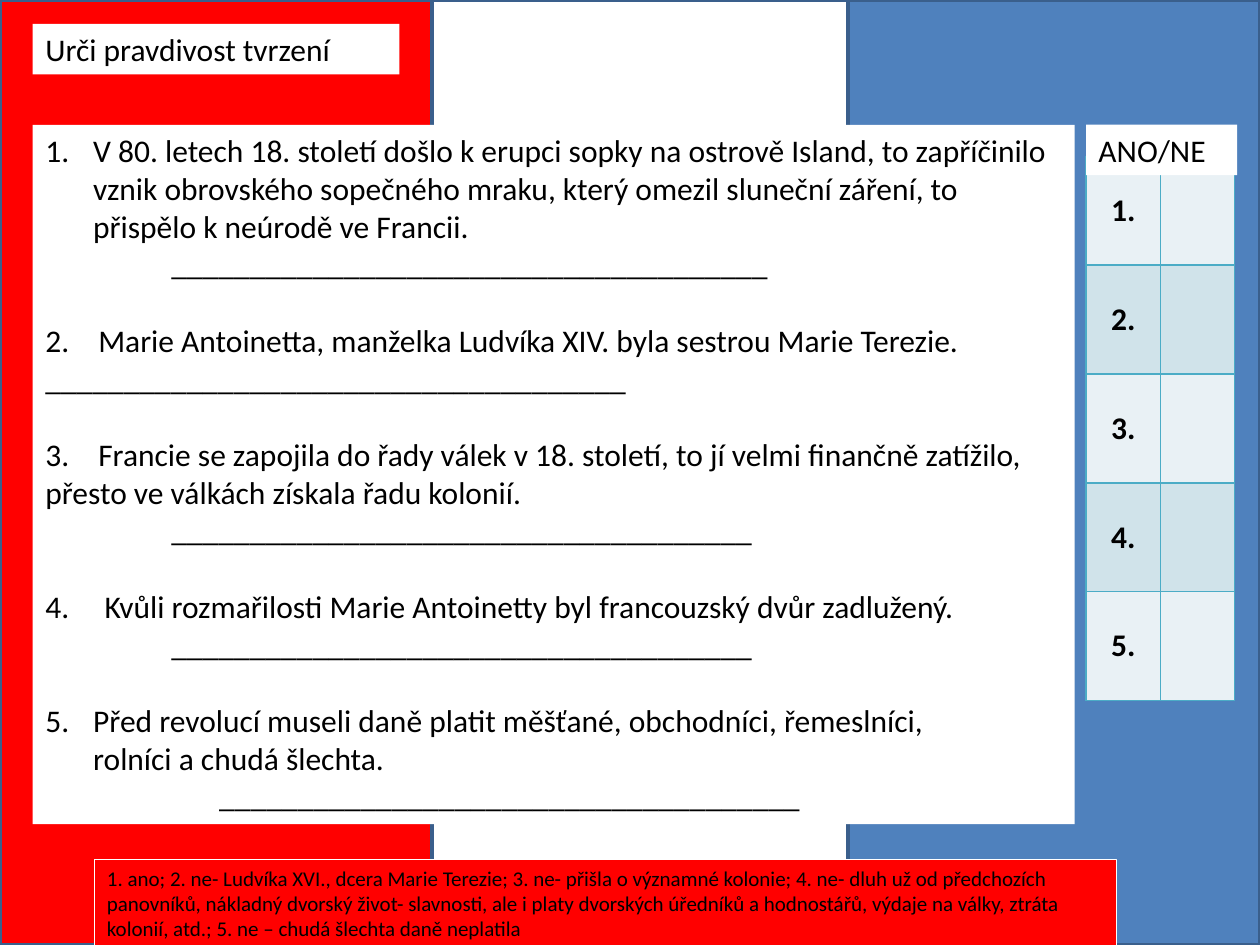
"""Build a true-or-false worksheet slide on the French Revolution."""
from pptx import Presentation, util as u
from pptx.dml.color import RGBColor
from pptx.enum import shapes, text
from pptx.oxml import parse_xml
from pptx.oxml.ns import nsdecls

BLACK, WHITE, RED, BLUE = "000000", "FFFFFF", "FF0000", "4F81BD"
BAND_LINE, GRID = "3A5F8C", "4BACC6"
ROW_FILLS = ["E9F1F5", "D0E3EA"]
BANDS = [(0, 3.43, RED), (3.43, 3.46, WHITE), (6.73, 3.27, BLUE)]

TITLE = "Urči pravdivost tvrzení"
HEADING = "ANO/NE"
ANSWERS = (
    "1. ano; 2. ne- Ludvíka XVI., dcera Marie Terezie; 3. ne- přišla o významné kolonie; "
    "4. ne- dluh už od předchozích panovníků, nákladný dvorský život- slavnosti, ale i platy "
    "dvorských úředníků a hodnostářů, výdaje na války, ztráta kolonií, atd.; "
    "5. ne – chudá šlechta daně neplatila"
)
# Each statement: text, hanging indent, continuation, its indent, blank length, blank indent
STATEMENTS = [
    ("V 80. letech 18. století došlo k erupci sopky na ostrově Island, to zapříčinilo "
     "vznik obrovského sopečného mraku, který omezil sluneční záření, to\v"
     "přispělo k neúrodě ve Francii.", 0.38, "", 0, 38, 1),
    ("Marie Antoinetta, manželka Ludvíka XIV. byla sestrou Marie Terezie.",
     0.42, "", 0, 37, 0),
    ("Francie se zapojila do řady válek v 18. století, to jí velmi finančně zatížilo,",
     0.42, "přesto ve válkách získala řadu kolonií.", 0, 37, 1),
    ("Kvůli rozmařilosti Marie Antoinetty byl francouzský dvůr zadlužený.",
     0.47, "", 0, 37, 1),
    ("Před revolucí museli daně platit měšťané, obchodníci, řemeslníci,",
     0.38, "rolníci a chudá šlechta.", 0.38, 37, 1.38),
]


def rgb(value):
    return RGBColor.from_string(value)


def paint(sp, fill, line=None, width=0):
    sp.fill.solid()
    sp.fill.fore_color.rgb = rgb(fill)
    if line:
        sp.line.color.rgb = rgb(line)
        sp.line.width = u.Pt(width)
    else:
        sp.line.fill.background()


def place(sp, left, top, width, height):
    sp.left, sp.top, sp.width, sp.height = map(u.Inches, (left, top, width, height))


def style(p, size=18, bold=False, align=text.PP_ALIGN.LEFT):
    p.alignment = align
    p.space_before = u.Pt(0)
    for r in p.runs:
        r.font.name, r.font.size, r.font.bold = "Calibri", u.Pt(size), bold
        r.font.color.rgb = rgb(BLACK)


def setup(sp):
    tf = sp.text_frame
    tf.word_wrap = True
    tf.auto_size = text.MSO_AUTO_SIZE.NONE
    tf.vertical_anchor = text.MSO_ANCHOR.TOP
    return tf


def write(sp, words, size=18):
    tf = setup(sp)
    tf.text = words
    style(tf.paragraphs[0], size)


def add_box(s, at, fill, line=None, width=0):
    sp = s.shapes.add_shape(shapes.MSO_SHAPE.RECTANGLE, *map(u.Inches, at))
    sp.shadow.inherit = False
    paint(sp, fill, line, width)
    return sp


def add_line(tf, words, left, number=None):
    p = tf.paragraphs[0] if not tf.text else tf.add_paragraph()
    p.text = words
    style(p)
    pPr = p._p.get_or_add_pPr()
    pPr.set("marL", str(u.Inches(left)))
    pPr.set("indent", str(-u.Inches(left) if number else 0))
    if number:
        p.space_before = u.Pt(22 if number > 1 else 0)
        bullet = f'<a:buAutoNum {nsdecls("a")} type="arabicPeriod" startAt="{number}"/>'
    else:
        bullet = f'<a:buNone {nsdecls("a")}/>'
    pPr.append(parse_xml(bullet))


def fill_statements(sp):
    tf = setup(sp)
    for number, (words, hang, more, more_left, length, left) in enumerate(STATEMENTS, 1):
        add_line(tf, words, hang, number)
        if more:
            add_line(tf, more, more_left)
        add_line(tf, "_" * length, left)


def border(cell):
    tcPr = cell._tc.get_or_add_tcPr()
    for i, side in enumerate(("lnL", "lnR", "lnT", "lnB")):
        tcPr.insert(i, parse_xml(
            f'<a:{side} {nsdecls("a")} w="12700"><a:solidFill>'
            f'<a:srgbClr val="{GRID}"/></a:solidFill></a:{side}>'))


def add_answer_table(s):
    rows = len(STATEMENTS)
    at = map(u.Inches, (8.62, 1.24, 1.18, 4.32))
    table = s.shapes.add_table(rows, 2, *at).table
    table.first_row = table.horz_banding = False
    for i in range(rows):
        table.cell(i, 0).text = f"{i + 1}."
        for cell in table.rows[i].cells:
            cell.fill.solid()
            cell.fill.fore_color.rgb = rgb(ROW_FILLS[i % 2])
            cell.vertical_anchor = text.MSO_ANCHOR.MIDDLE
            style(cell.text_frame.paragraphs[0], bold=True, align=text.PP_ALIGN.CENTER)
            border(cell)


def main():
    prs = Presentation()
    prs.slide_width, prs.slide_height = u.Inches(10), u.Inches(7.5)
    s = prs.slides.add_slide(prs.slide_layouts[1])
    title, body = s.shapes.title, s.placeholders[1]
    for left, width, fill in BANDS:
        band = add_box(s, (left, 0, width, 7.5), fill, BAND_LINE, 2)
        title.element.addprevious(band.element)

    place(title, 0.26, 0.19, 2.91, 0.4)
    paint(title, WHITE)
    write(title, TITLE)
    place(body, 0.26, 0.99, 8.27, 5.55)
    paint(body, WHITE)
    fill_statements(body)

    add_answer_table(s)
    write(add_box(s, (8.62, 0.99, 1.2, 0.4), WHITE), HEADING)
    write(add_box(s, (0.75, 6.82, 8.11, 0.71), RED, WHITE, 0.75), ANSWERS, 12)
    prs.save("out.pptx")


if __name__ == "__main__":
    main()
